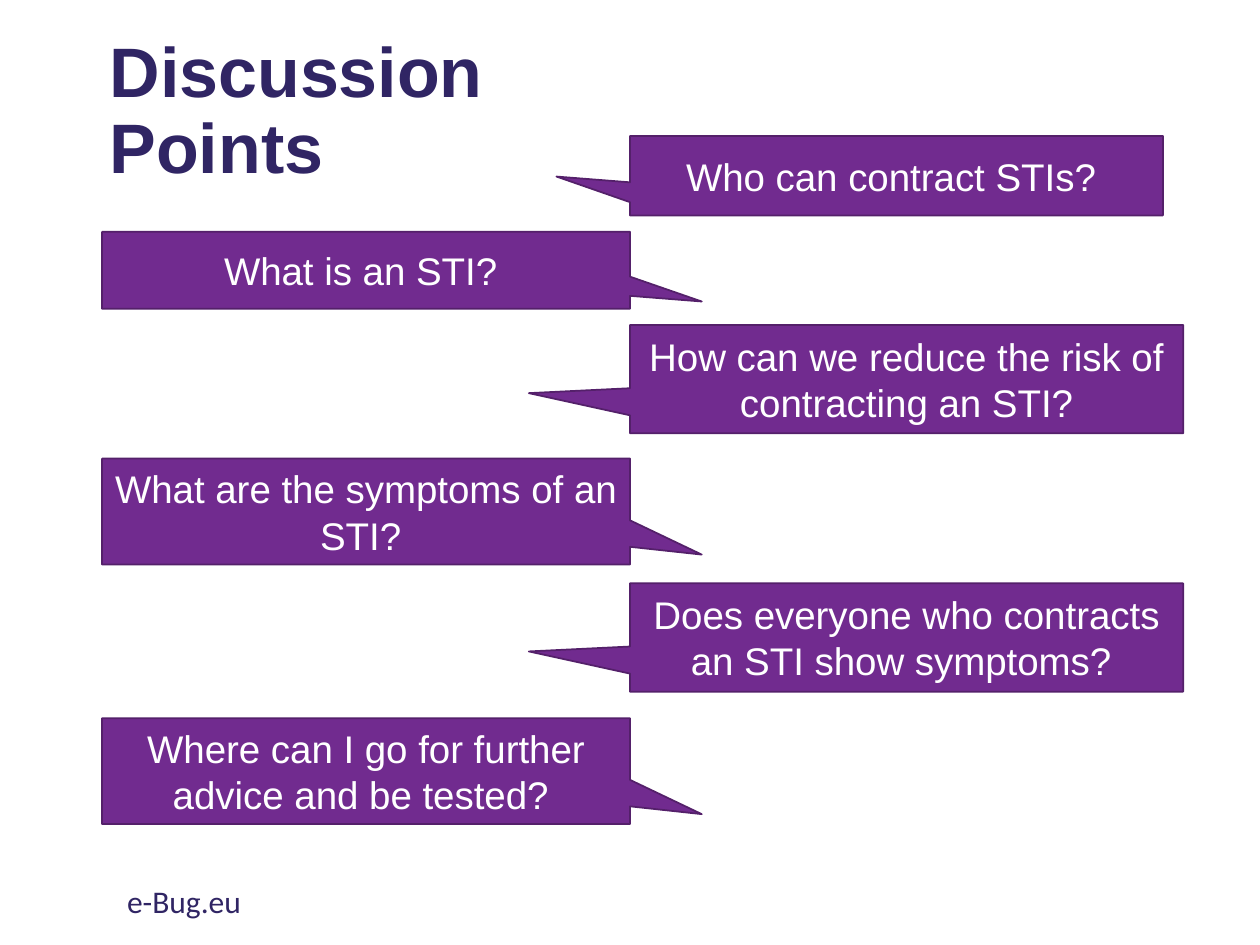
from pptx import Presentation
from pptx.dml.color import RGBColor
from pptx.enum.shapes import MSO_SHAPE
from pptx.enum.text import MSO_ANCHOR, PP_ALIGN
from pptx.util import Inches, Pt

CALLOUT = MSO_SHAPE.RECTANGULAR_CALLOUT
MIDDLE = MSO_ANCHOR.MIDDLE
LEFT, CENTER = PP_ALIGN.LEFT, PP_ALIGN.CENTER

NAVY, PURPLE, DARK_PURPLE, WHITE = "302564", "712B8F", "54206A", "FFFFFF"

# Content
TITLE = "Discussion Points"
FOOTER = "e-Bug.eu"

# Column: left, width, pointer tip
LEFT_COLUMN = (0.81, 4.19, (0.636, 0.407))
RIGHT_COLUMN = (5, 4.39, (-0.683, 0.129))
FIRST_RIGHT = (5, 4.23, (-0.638, 0.011))

# Question, column, top, height
QUESTIONS = [
    ("Who can contract STIs? ", FIRST_RIGHT, 1.08, 0.63),
    ("What is an STI? ", LEFT_COLUMN, 1.84, 0.61),
    ("How can we reduce the risk of contracting an STI?", RIGHT_COLUMN, 2.58, 0.86),
    ("What are the symptoms of an STI? ", LEFT_COLUMN, 3.64, 0.84),
    ("Does everyone who contracts an STI show symptoms? ", RIGHT_COLUMN, 4.63, 0.86),
    ("Where can I go for further advice and be tested? ", LEFT_COLUMN, 5.7, 0.84),
]


def color(value):
    return RGBColor.from_string(value)


def write(shape, text, size, font, ink, align=LEFT, bold=False):
    frame = shape.text_frame
    frame.word_wrap = True
    frame.text = text
    para = frame.paragraphs[0]
    para.alignment = align
    span = para.runs[0]
    span.font.name = font
    span.font.size = Pt(size)
    span.font.bold = bold
    span.font.color.rgb = color(ink)


deck = Presentation()
deck.slide_width, deck.slide_height = Inches(10), Inches(7.5)
page = deck.slides.add_slide(deck.slide_layouts[5])

# Title
title = page.shapes.title
title.left, title.top = Inches(0.77), Inches(0.17)
title.width, title.height = Inches(4.23), Inches(1.45)
write(title, TITLE, 40, "Arial", NAVY, bold=True)
title.text_frame.vertical_anchor = MIDDLE
title.text_frame.paragraphs[0].line_spacing = 0.9

# Question callouts
for question, (left, width, tip), top, height in QUESTIONS:
    callout = page.shapes.add_shape(
        CALLOUT, Inches(left), Inches(top), Inches(width), Inches(height))
    callout.adjustments[0], callout.adjustments[1] = tip
    callout.shadow.inherit = False
    callout.fill.solid()
    callout.fill.fore_color.rgb = color(PURPLE)
    callout.line.color.rgb = color(DARK_PURPLE)
    callout.line.width = Pt(1)
    callout.text_frame.vertical_anchor = MIDDLE
    write(callout, question, 22, "Arial", WHITE, CENTER)

# Footer
footer = page.shapes.add_textbox(Inches(0.91), Inches(6.95), Inches(3.38), Inches(0.4))
write(footer, FOOTER, 18, "Calibri", NAVY)

deck.save("out.pptx")
